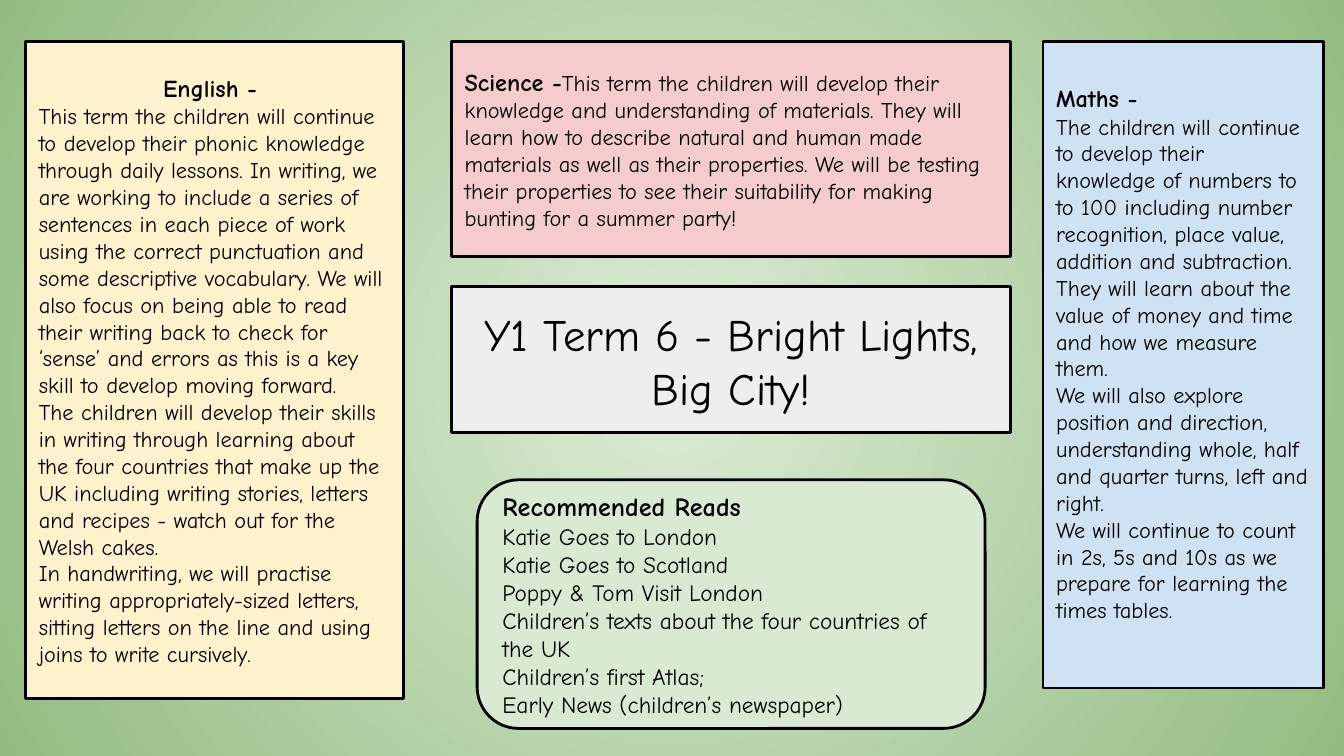
import pptx
import pptx.util
from lxml import etree
from pptx.dml.color import RGBColor
from pptx.enum.shapes import MSO_SHAPE
from pptx.enum.text import MSO_ANCHOR, MSO_AUTO_SIZE, PP_ALIGN
from pptx.oxml.ns import qn
from pptx.util import Inches, Pt

FONT = "Comic Neue"
BLACK = RGBColor(0x00, 0x00, 0x00)
GREY = RGBColor(0xEE, 0xEE, 0xEE)
CREAM = RGBColor(0xFF, 0xF2, 0xCC)
BLUE = RGBColor(0xCF, 0xE2, 0xF3)
PINK = RGBColor(0xF4, 0xCC, 0xCC)
PALE_GREEN = RGBColor(0xD9, 0xEA, 0xD3)
GLOW = RGBColor(0xDC, 0xEC, 0xD5)
LEAF = RGBColor(0x93, 0xBC, 0x81)

TOP = 0.31
MIDDLE_LEFT, MIDDLE_WIDTH = 3.36, 4.16

ENGLISH = [
    "This term the children will continue to develop their phonic knowledge through daily "
    "lessons. In writing, we are working to include a series of sentences in each piece of "
    "work using the correct punctuation and some descriptive vocabulary. We will also focus "
    "on being able to read their writing back to check for ‘sense’ and errors as this is a "
    "key skill to develop moving forward.",
    "The children will develop their skills in writing through learning about the four "
    "countries that make up the UK including writing stories, letters and recipes - watch "
    "out for the Welsh cakes.",
    "In handwriting, we will practise writing appropriately-sized letters, sitting letters "
    "on the line and using joins to write cursively.",
]
MATHS = [
    "The children will continue to develop their knowledge of numbers to to 100 including "
    "number recognition, place value, addition and subtraction. They will learn about the "
    "value of money and time and how we measure them.",
    "We will also explore position and direction, understanding whole, half and quarter "
    "turns, left and right.",
    "We will continue to count in 2s, 5s and 10s as we prepare for learning the times tables.",
]
SCIENCE = (
    "This term the children will develop their knowledge and understanding of materials. "
    "They will learn how to describe natural and human made materials as well as their "
    "properties. We will be testing their properties to see their suitability for making "
    "bunting for a summer party!"
)
READS = [
    "Katie Goes to London",
    "Katie Goes to Scotland",
    "Poppy & Tom Visit London",
    "Children’s texts about the four countries of the UK",
    "Children’s first Atlas;",
    "Early News (children’s newspaper)",
]


def set_background(slide):
    """Fill the background with a gradient that spreads from the centre."""
    fill = slide.background.fill
    fill.gradient()
    for stop, color, position in zip(fill.gradient_stops, (GLOW, LEAF), (0, 1)):
        stop.color.rgb = color
        stop.position = position
    grad = next(slide.element.iter(qn("a:gradFill")))
    grad.remove(grad.find(qn("a:lin")))
    circle = etree.SubElement(grad, qn("a:path"), {"path": "circle"})
    sides = {side: "50000" for side in "ltrb"}
    etree.SubElement(circle, qn("a:fillToRect"), sides)


def style_box(sp, color):
    sp.fill.solid()
    sp.fill.fore_color.rgb = color
    sp.line.color.rgb = BLACK
    sp.line.width = Pt(1.5)
    tf = sp.text_frame
    tf.word_wrap = True
    tf.auto_size = MSO_AUTO_SIZE.NONE
    tf.vertical_anchor = MSO_ANCHOR.MIDDLE
    tf.margin_left = tf.margin_right = tf.margin_top = tf.margin_bottom = Inches(0.1)


def style_paragraph(p, size, align=PP_ALIGN.LEFT, bold=False):
    p.alignment = align
    p.font.name = FONT
    p.font.size = Pt(size)
    p.font.bold = bold
    p.font.color.rgb = BLACK


def add_title(slide, text, left, top, width, height):
    sp = slide.shapes.title
    sp.left, sp.top, sp.width, sp.height = map(Inches, (left, top, width, height))
    style_box(sp, GREY)
    tf = sp.text_frame
    tf.margin_top = Inches(0.12)
    tf.text = text
    style_paragraph(tf.paragraphs[0], 24, PP_ALIGN.CENTER)


def add_box(slide, place, color, shape=MSO_SHAPE.RECTANGLE):
    sp = slide.shapes.add_shape(shape, *map(Inches, place))
    sp.shadow.inherit = False
    style_box(sp, color)
    return sp


def write_heading(tf, text, size=13, align=PP_ALIGN.LEFT):
    p = tf.paragraphs[0]
    p.text = text
    style_paragraph(p, size, align, bold=True)


def write_body(tf, texts, size=12):
    for text in texts:
        p = tf.add_paragraph()
        p.text = text
        style_paragraph(p, size)


def write_run_in(tf, heading, text):
    """Put a bold heading and its text on the same line."""
    p = tf.paragraphs[0]
    style_paragraph(p, 12)
    r = p.add_run()
    r.text = heading
    r.font.bold = True
    r.font.size = Pt(13)
    p.add_run().text = text


def main():
    prs = pptx.Presentation()
    prs.slide_width = Inches(10)
    prs.slide_height = prs.slide_width * 9 // 16
    slide = prs.slides.add_slide(prs.slide_layouts[5])
    set_background(slide)
    add_title(slide, "Y1 Term 6 - Bright Lights, Big City!",
              MIDDLE_LEFT, 2.13, MIDDLE_WIDTH, 1.09)

    english = add_box(slide, (0.19, TOP, 2.81, 4.89), CREAM).text_frame
    write_heading(english, "English - ", align=PP_ALIGN.CENTER)
    write_body(english, ENGLISH)

    maths = add_box(slide, (7.76, TOP, 2.09, 4.81), BLUE).text_frame
    maths.margin_bottom = Inches(0.27)
    write_heading(maths, "Maths -")
    write_body(maths, MATHS)

    science = add_box(slide, (MIDDLE_LEFT, TOP, MIDDLE_WIDTH, 1.6), PINK).text_frame
    write_run_in(science, "Science -", SCIENCE)

    reads = add_box(slide, (3.55, 3.57, 3.78, 1.85), PALE_GREEN,
                    MSO_SHAPE.ROUNDED_RECTANGLE).text_frame
    write_heading(reads, "Recommended Reads", 14)
    write_body(reads, READS, 12.5)

    prs.save("out.pptx")


if __name__ == "__main__":
    main()
